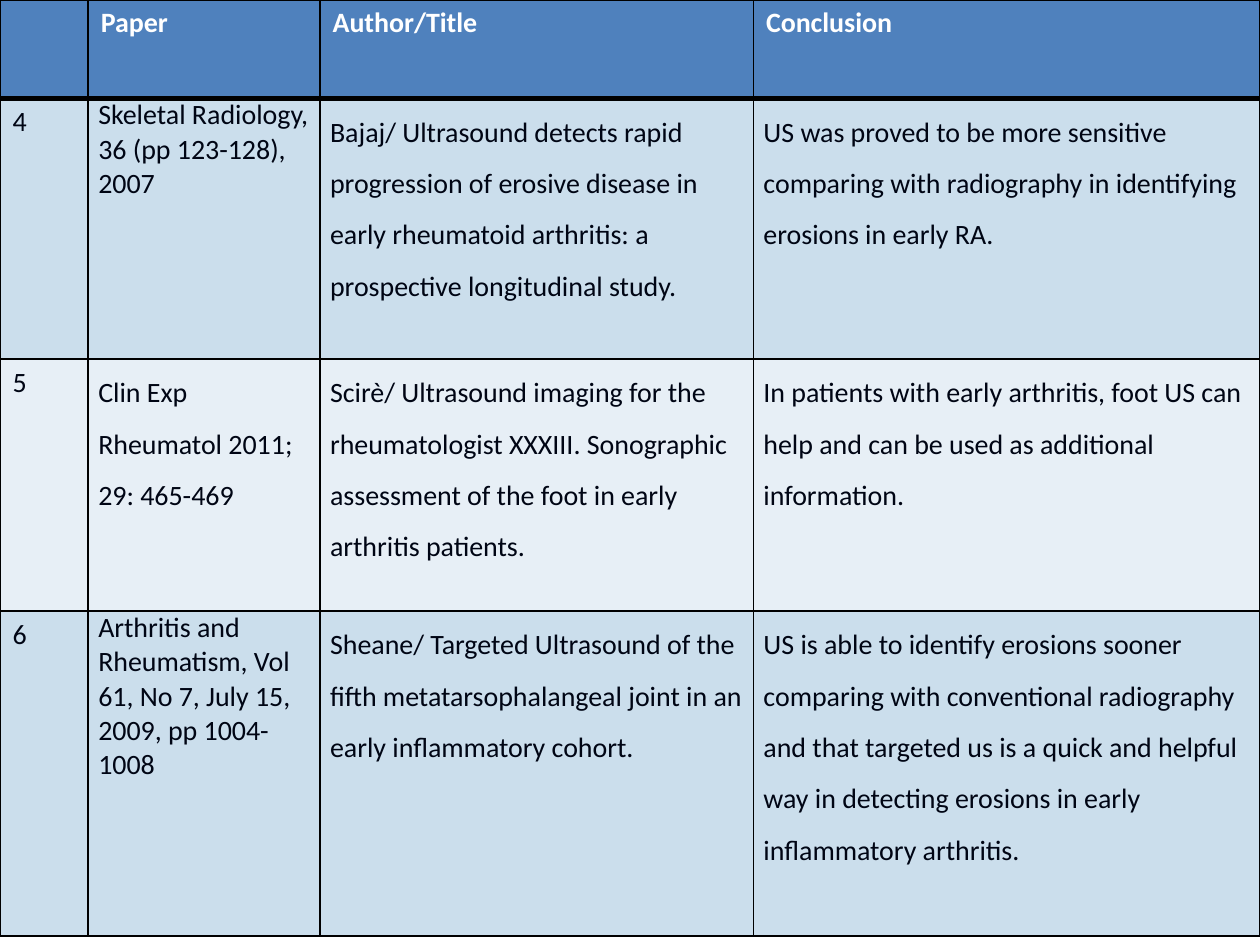
from lxml.etree import SubElement
from pptx import Presentation
from pptx.dml.color import RGBColor
from pptx.oxml.ns import qn
from pptx.util import Inches, Pt

COLUMN_WIDTHS = [0.7, 1.84, 3.44, 4.02]
ROW_HEIGHTS = [0.78, 2.07, 2, 2.58]
HEADER_FILL, BAND_FILLS = "4F81BD", ["CBDEEC", "E7EFF6"]
HEADER_TEXT, BODY_TEXT, BORDER = "FFFFFF", "000514", "000000"
LABEL_MARGINS, BODY_MARGINS = (0.1, 0.05), (0.08, 0)

HEADINGS = ["", "Paper", "Author/Title", "Conclusion"]
STUDIES = [
    ["4", "Skeletal Radiology, 36 (pp 123-128), 2007",
     "Bajaj/ Ultrasound detects rapid progression of erosive disease in early "
     "rheumatoid arthritis: a prospective longitudinal study.",
     "US was proved to be more sensitive comparing with radiography in "
     "identifying erosions in early RA."],
    ["5", "Clin Exp Rheumatol 2011; 29: 465-469",
     "Scirè/ Ultrasound imaging for the rheumatologist XXXIII. Sonographic "
     "assessment of the foot in early arthritis patients.",
     "In patients with early arthritis, foot US can help and can be used as "
     "additional information."],
    ["6", "Arthritis and Rheumatism, Vol 61, No 7, July 15, 2009, pp 1004-1008",
     "Sheane/ Targeted Ultrasound of the fifth metatarsophalangeal joint in an "
     "early inflammatory cohort.",
     "US is able to identify erosions sooner comparing with conventional "
     "radiography and that targeted us is a quick and helpful way in detecting "
     "erosions in early inflammatory arthritis."],
]
SINGLE_SPACED_PAPERS = {"4", "6"}


def color(value):
    return RGBColor.from_string(value)


def write_text(cell, text, *, text_color, bold=False, spacing=None, margins=LABEL_MARGINS):
    cell.margin_left = cell.margin_right = Inches(margins[0])
    cell.margin_top = cell.margin_bottom = Inches(margins[1])
    para = cell.text_frame.paragraphs[0]
    if spacing:
        para.line_spacing = spacing
    if text:
        span = para.add_run()
        span.text = text
        font = span.font
        font.name, font.size, font.bold = "Calibri", Pt(16), bold
        font.color.rgb = color(text_color)


def style_cell(cell, fill, top=1, bottom=1):
    """Draw the four borders, with widths in points, and fill the cell."""
    properties = cell._tc.get_or_add_tcPr()
    for side, width in (("L", 1), ("R", 1), ("T", top), ("B", bottom)):
        line = SubElement(properties, qn(f"a:ln{side}"), w=str(Pt(width)))
        line_fill = SubElement(line, qn("a:solidFill"))
        SubElement(line_fill, qn("a:srgbClr"), val=BORDER)
    cell.fill.solid()
    cell.fill.fore_color.rgb = color(fill)


def add_grid(page):
    frame = page.shapes.add_table(
        len(ROW_HEIGHTS), len(COLUMN_WIDTHS), 0, 0,
        Inches(sum(COLUMN_WIDTHS)), Inches(sum(ROW_HEIGHTS)))
    table = frame.table
    for column, width in zip(table.columns, COLUMN_WIDTHS):
        column.width = Inches(width)
    for row, height in zip(table.rows, ROW_HEIGHTS):
        row.height = Inches(height)
    return table


def fill_header(table):
    for column, heading in enumerate(HEADINGS):
        cell = table.cell(0, column)
        style_cell(cell, HEADER_FILL, bottom=3)
        write_text(cell, heading, text_color=HEADER_TEXT, bold=True)


def fill_study(table, row, study):
    for column, text in enumerate(study):
        cell = table.cell(row, column)
        style_cell(cell, BAND_FILLS[(row - 1) % 2], top=3 if row == 1 else 1)
        single = column == 0 or (column == 1 and study[0] in SINGLE_SPACED_PAPERS)
        write_text(cell, text, text_color=BODY_TEXT,
                   spacing=None if single else 1.5,
                   margins=BODY_MARGINS if column else LABEL_MARGINS)


def main():
    deck = Presentation()
    deck.slide_width, deck.slide_height = Inches(10), Inches(7.5)
    page = deck.slides.add_slide(deck.slide_layouts[6])
    table = add_grid(page)
    fill_header(table)
    for row, study in enumerate(STUDIES, start=1):
        fill_study(table, row, study)
    deck.save("out.pptx")


if __name__ == "__main__":
    main()
